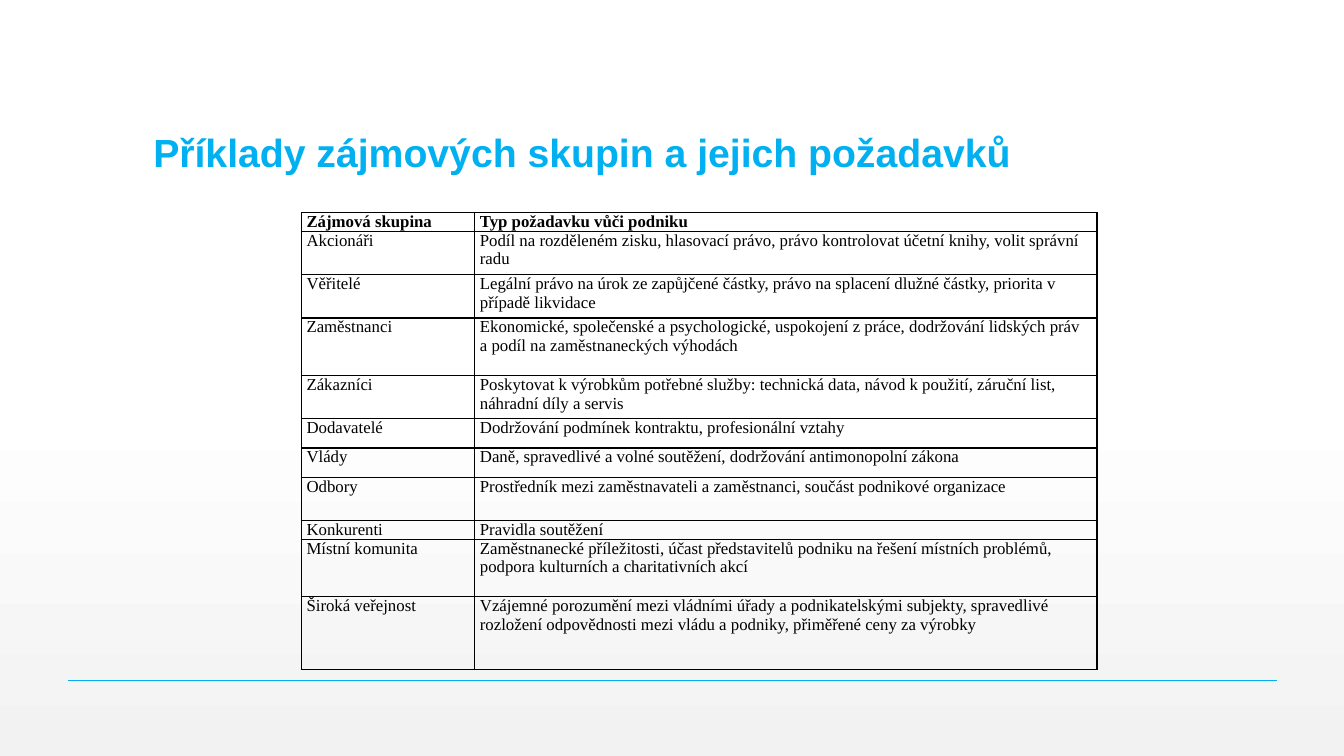
from lxml.etree import SubElement as Sub
from pptx import Presentation
from pptx.dml.color import RGBColor as Rgb
from pptx.enum.shapes import MSO_CONNECTOR as Conn
from pptx.enum.text import MSO_ANCHOR as Anchor, PP_ALIGN as Align
from pptx.oxml.ns import qn
from pptx.util import Inches, Pt

HEX = {"blue": "00B0F0", "black": "000000", "white": "FFFFFF", "gray": "F2F2F2"}

# Row height, group, demand
ROWS = [
    (0.14, "Zájmová skupina", "Typ požadavku vůči podniku"),
    (0.43, "Akcionáři", "Podíl na rozděleném zisku, hlasovací právo, "
     "právo kontrolovat účetní knihy, volit správní radu"),
    (0.43, "Věřitelé", "Legální právo na úrok ze zapůjčené částky, "
     "právo na splacení dlužné částky, priorita v případě likvidace"),
    (0.57, "Zaměstnanci", "Ekonomické, společenské a psychologické, uspokojení z práce, "
     "dodržování lidských práv a podíl na zaměstnaneckých výhodách"),
    (0.43, "Zákazníci", "Poskytovat k výrobkům potřebné služby: technická data, "
     "návod k použití, záruční list, náhradní díly a servis"),
    (0.29, "Dodavatelé", "Dodržování podmínek kontraktu, profesionální vztahy"),
    (0.29, "Vlády", "Daně, spravedlivé a volné soutěžení, dodržování antimonopolní zákona"),
    (0.43, "Odbory", "Prostředník mezi zaměstnavateli a zaměstnanci, "
     "součást podnikové organizace"),
    (0.14, "Konkurenti", "Pravidla soutěžení"),
    (0.57, "Místní komunita", "Zaměstnanecké příležitosti, účast představitelů podniku "
     "na řešení místních problémů, podpora kulturních a charitativních akcí"),
    (0.72, "Široká veřejnost", "Vzájemné porozumění mezi vládními úřady "
     "a podnikatelskými subjekty, spravedlivé rozložení odpovědnosti "
     "mezi vládu a podniky, přiměřené ceny za výrobky"),
]
COLS = [1.72, 6.17]


def color(name):
    return Rgb.from_string(HEX[name])


class Page:
    head = ("Arial", 28, "blue")
    body = ("Times New Roman", 12, "black")

    def __init__(self, deck):
        self.slide = deck.slides.add_slide(deck.slide_layouts[5])
        self.shapes = self.slide.shapes

    def back(self, stops):
        fill = self.slide.background.fill
        fill.gradient()
        fill.gradient_angle = 270
        for stop, (place, name) in zip(fill.gradient_stops, stops):
            stop.position = place
            stop.color.rgb = color(name)

    def text(self, para, words, style, bold):
        run = para.add_run()
        run.text = words
        font = run.font
        font.name, size, name = style
        font.size = Pt(size)
        font.bold = bold
        font.color.rgb = color(name)

    def title(self, words, left, top, width, height):
        box = self.shapes.title
        box.left, box.top = Inches(left), Inches(top)
        box.width, box.height = Inches(width), Inches(height)
        frame = box.text_frame
        frame.word_wrap = True
        frame.vertical_anchor = Anchor.BOTTOM
        para = frame.paragraphs[0]
        para.alignment = Align.LEFT
        para.line_spacing = 0.9
        self.text(para, words, self.head, True)

    def line(self, left, right, top):
        rule = self.shapes.add_connector(
            Conn.STRAIGHT, Inches(left), Inches(top), Inches(right), Inches(top))
        rule.line.color.rgb = color("blue")
        rule.line.width = Pt(1)
        Sub(rule._element.spPr, qn("a:effectLst"))

    def edge(self, cell):
        props = cell._tc.get_or_add_tcPr()
        for spot, side in enumerate("LRTB"):
            line = Sub(props, qn(f"a:ln{side}"), w=str(Pt(1)))
            fill = Sub(line, qn("a:solidFill"))
            Sub(fill, qn("a:srgbClr"), val=HEX["black"])
            props.insert(spot, line)

    def cell(self, cell, words, bold):
        cell.margin_left = cell.margin_right = Inches(0.05)
        cell.margin_top = cell.margin_bottom = 0
        cell.fill.background()
        self.edge(cell)
        self.text(cell.text_frame.paragraphs[0], words, self.body, bold)

    def table(self, rows, cols, left, top):
        high = sum(row[0] for row in rows)
        grid = self.shapes.add_table(
            len(rows), len(cols), Inches(left), Inches(top),
            Inches(sum(cols)), Inches(high)).table
        grid.horz_banding = grid.first_row = False
        for col, width in zip(grid.columns, cols):
            col.width = Inches(width)
        for r, (height, *texts) in enumerate(rows):
            grid.rows[r].height = Inches(height)
            for c, words in enumerate(texts):
                self.cell(grid.cell(r, c), words, r == 0)


def main():
    deck = Presentation()
    deck.slide_width, deck.slide_height = Inches(13.33), Inches(7.5)
    page = Page(deck)
    # Backdrop and bottom rule
    page.back([(0.53, "white"), (1, "gray")])
    page.line(0.67, 12.67, 6.75)
    # Title
    page.title("Příklady zájmových skupin a jejich požadavků", 1.42, 0.55, 10.5, 1.25)
    # Groups and their demands
    page.table(ROWS, COLS, 2.99, 2.11)
    deck.save("out.pptx")


if __name__ == "__main__":
    main()
